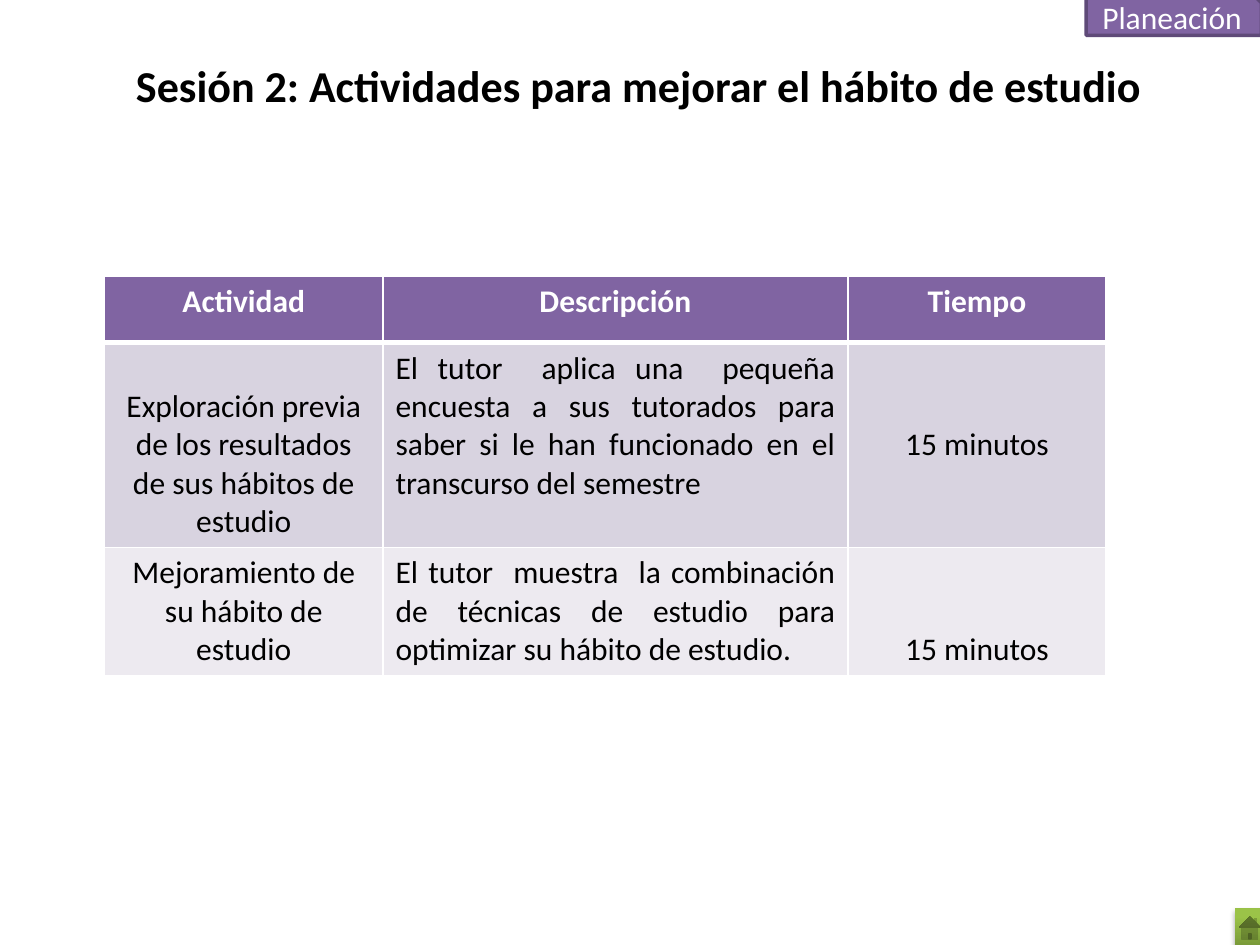
import pptx
import pptx.dml.color
import pptx.enum.shapes
import pptx.enum.text
import pptx.oxml
import pptx.oxml.ns
import pptx.util
from dataclasses import dataclass

Inches = pptx.util.Inches
Pt = pptx.util.Pt
ALIGN = pptx.enum.text.PP_ALIGN
MIDDLE = pptx.enum.text.MSO_ANCHOR.MIDDLE
SHAPES = pptx.enum.shapes.MSO_SHAPE


@dataclass(frozen=True)
class Theme:
    font: str = "Calibri"
    title_size: float = 25.2
    body_size: float = 18
    ink: str = "000000"
    paper: str = "FFFFFF"
    purple: str = "8064A2"
    purple_edge: str = "5F4A78"
    bands: tuple = ("D8D3E0", "EDEAF0")
    green_dark: str = "779737"
    green_light: str = "9BC348"


THEME = Theme()

TITLE = "Sesión 2: Actividades para mejorar el hábito de estudio"
SECTION = "Planeación"
HEADERS = ("Actividad", "Descripción", "Tiempo")
# Each cell: text, lines it is lowered by
ACTIVITIES = [
    [("Exploración previa de los resultados de sus hábitos de estudio", 1),
     ("El tutor  aplica una  pequeña encuesta a sus tutorados para saber si "
      "le han funcionado en el transcurso del semestre", 0),
     ("15 minutos", 2)],
    [("Mejoramiento de su hábito de estudio", 0),
     ("El tutor  muestra  la combinación de técnicas de estudio para "
      "optimizar su hábito de estudio.", 0),
     ("15 minutos", 2)],
]
COLUMN_WIDTHS = (2.21, 3.69, 2.05)
COLUMN_ALIGNS = (ALIGN.CENTER, ALIGN.JUSTIFY, ALIGN.CENTER)
ROW_HEIGHTS = (0.53, 1.62, 1.01)
LINE_HEIGHT = 0.305
CELL_MARGIN = 0.05


def rgb(value):
    return pptx.dml.color.RGBColor.from_string(value)


def write(frame, text, size, color, align=ALIGN.CENTER, bold=False):
    paragraph = frame.paragraphs[0]
    paragraph.alignment = align
    run = paragraph.add_run()
    run.text = text
    run.font.name = THEME.font
    run.font.size = Pt(size)
    run.font.bold = bold
    run.font.color.rgb = rgb(color)


def add_borders(cell, bottom):
    """Rule the cell in white; borders must come before the fill."""
    widths = {"lnL": 1, "lnR": 1, "lnT": 1, "lnB": bottom}
    for index, (side, width) in enumerate(widths.items()):
        border = pptx.oxml.parse_xml(
            f'<a:{side} {pptx.oxml.ns.nsdecls("a")} w="{Pt(width)}"><a:solidFill>'
            f'<a:srgbClr val="{THEME.paper}"/></a:solidFill></a:{side}>')
        cell._tc.get_or_add_tcPr().insert(index, border)


def add_activities(slide):
    rows = [[(header, 0) for header in HEADERS]] + ACTIVITIES
    table = slide.shapes.add_table(
        len(rows), len(HEADERS), Inches(0.83), Inches(2.19),
        Inches(sum(COLUMN_WIDTHS)), Inches(sum(ROW_HEIGHTS))).table
    for column, width in zip(table.columns, COLUMN_WIDTHS):
        column.width = Inches(width)
    for r, row in enumerate(rows):
        table.rows[r].height = Inches(ROW_HEIGHTS[r])
        header = r == 0
        for c, (text, lowered) in enumerate(row):
            cell = table.cell(r, c)
            cell.margin_top = Inches(CELL_MARGIN + lowered * LINE_HEIGHT)
            cell.fill.solid()
            cell.fill.fore_color.rgb = rgb(
                THEME.purple if header else THEME.bands[(r - 1) % 2])
            add_borders(cell, 3 if header or r == 0 else 1)
            write(cell.text_frame, text, THEME.body_size,
                  THEME.paper if header else THEME.ink,
                  ALIGN.CENTER if header else COLUMN_ALIGNS[c], header)


def add_section_tab(slide):
    tab = slide.shapes.add_shape(
        SHAPES.SNIP_1_RECTANGLE, Inches(8.62), Inches(-0.03), Inches(1.39), Inches(0.31))
    tab.shadow.inherit = False
    tab.fill.solid()
    tab.fill.fore_color.rgb = rgb(THEME.purple)
    tab.line.color.rgb = rgb(THEME.purple_edge)
    tab.line.width = Pt(2)
    tab.text_frame.vertical_anchor = MIDDLE
    write(tab.text_frame, SECTION, THEME.body_size, THEME.paper)


def add_home_button(slide):
    home = slide.shapes.add_shape(
        SHAPES.ACTION_BUTTON_HOME, Inches(9.8), Inches(7.21), Inches(0.24), Inches(0.31))
    home.fill.gradient()
    home.fill.gradient_angle = 90
    stops = zip(home.fill.gradient_stops,
                ((0, THEME.green_dark), (0.8, THEME.green_light)))
    for stop, (position, color) in stops:
        stop.position = position
        stop.color.rgb = rgb(color)
    home.line.fill.background()
    home.shadow.inherit = False
    effects = home._element.spPr.find(pptx.oxml.ns.qn("a:effectLst"))
    effects.append(pptx.oxml.parse_xml(
        f'<a:outerShdw {pptx.oxml.ns.nsdecls("a")} blurRad="{Pt(3.1)}" '
        f'dist="{Pt(1.8)}" dir="5400000" rotWithShape="0">'
        f'<a:srgbClr val="{THEME.ink}"><a:alpha val="35000"/></a:srgbClr></a:outerShdw>'))


def main():
    deck = pptx.Presentation()
    deck.slide_width, deck.slide_height = Inches(10), Inches(7.5)
    slide = deck.slides.add_slide(deck.slide_layouts[5])

    title = slide.shapes.title
    title.left, title.top = Inches(0.57), Inches(0.36)
    title.width, title.height = Inches(9), Inches(0.63)
    title.text_frame.vertical_anchor = MIDDLE
    write(title.text_frame, TITLE, THEME.title_size, THEME.ink, bold=True)

    add_activities(slide)
    add_section_tab(slide)
    add_home_button(slide)
    deck.save("out.pptx")


if __name__ == "__main__":
    main()
